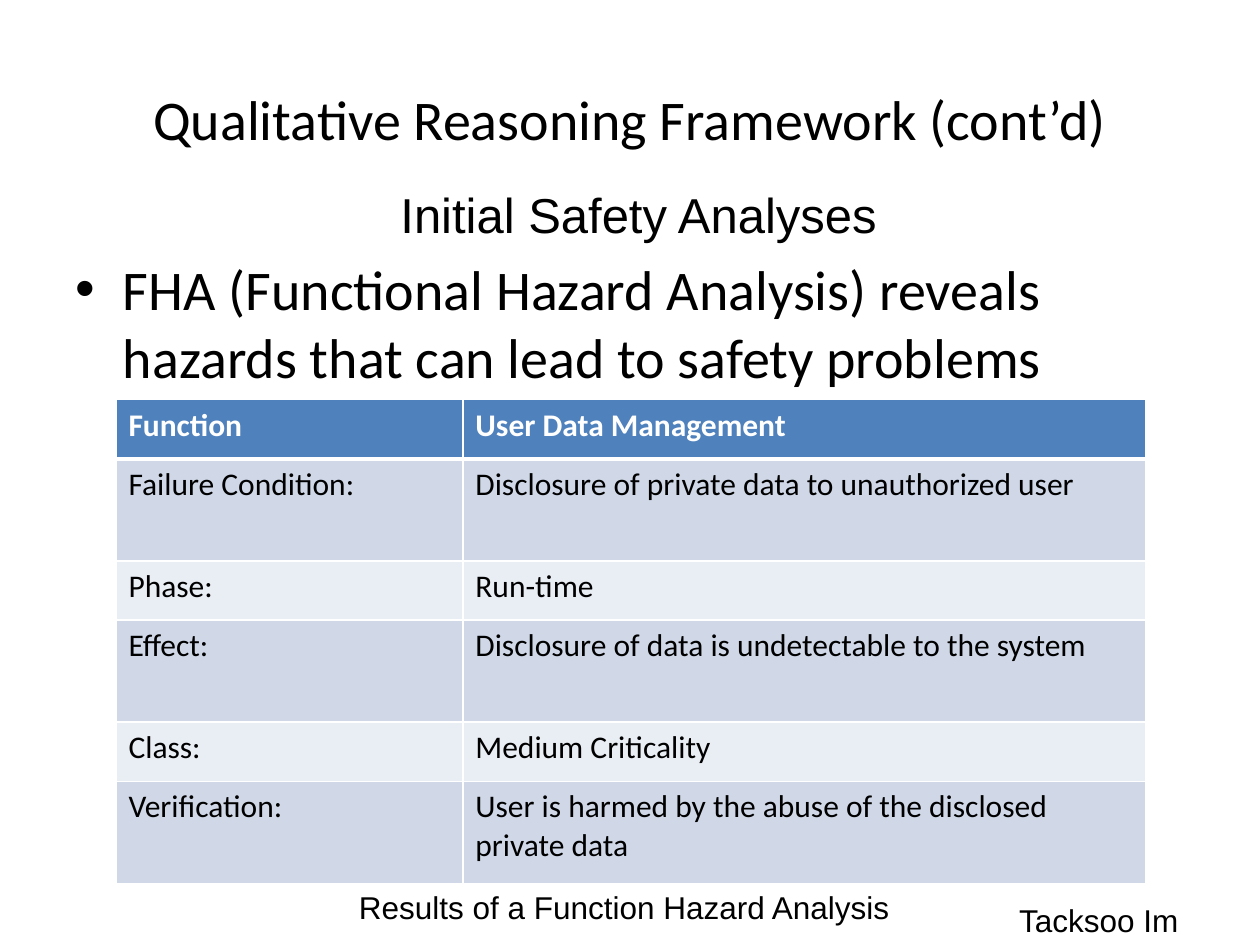
from lxml.etree import SubElement as Sub
from pptx import Presentation
from pptx.dml.color import RGBColor as RGB
from pptx.enum.text import MSO_ANCHOR as Anchor, MSO_AUTO_SIZE as Fit, PP_ALIGN as Align
from pptx.oxml.ns import qn
from pptx.util import Inches, Pt

WIDE, HIGH = Inches(10), Inches(7.5)
COLORS = {"ink": "000000", "white": "FFFFFF", "head": "4F81BD",
          "odd": "D0D8E8", "even": "E9EDF4"}
ROWS = [
    ("Function", "User Data Management"),
    ("Failure Condition:", "Disclosure of private data to unauthorized user"),
    ("Phase:", "Run-time"),
    ("Effect:", "Disclosure of data is undetectable to the system"),
    ("Class:", "Medium Criticality"),
    ("Verification:", "User is harmed by the abuse of the disclosed private data"),
]
SHORT, TALL = 0.47, 0.81  # row heights in inches
SPLIT = 0.337             # first column's share of the table


def area(left, top, width, height):
    """Turn shares of the slide into lengths."""
    return (int(left * WIDE), int(top * HIGH), int(width * WIDE), int(height * HIGH))


def place(shape, box):
    shape.left, shape.top, shape.width, shape.height = box


def write(frame, text, size, face="Calibri", color="ink", bold=False):
    frame.text = text
    para = frame.paragraphs[0]
    font = para.font
    font.name, font.size, font.bold = face, Pt(size), bold
    font.color.rgb = RGB.from_string(COLORS[color])
    return para


def add_title(slide, box, text):
    shape = slide.shapes.title
    place(shape, box)
    shape.text_frame.vertical_anchor = Anchor.MIDDLE
    write(shape.text_frame, text, 32).alignment = Align.CENTER


def add_body(slide, box, text):
    shape = slide.placeholders[1]
    place(shape, box)
    write(shape.text_frame, text, 32)


def add_label(slide, box, text, size, wrap=True):
    frame = slide.shapes.add_textbox(*box).text_frame
    frame.word_wrap = wrap
    frame.auto_size = Fit.SHAPE_TO_FIT_TEXT
    write(frame, text, size, "Arial")


def add_edges(cell, row):
    """White cell borders, thick between the header and the body."""
    props = cell._tc.get_or_add_tcPr()
    thick = {0: "lnB", 1: "lnT"}.get(row)
    for side in ("lnL", "lnR", "lnT", "lnB"):
        line = Sub(props, qn(f"a:{side}"), w=str(Pt(3 if side == thick else 1)))
        fill = Sub(line, qn("a:solidFill"))
        Sub(fill, qn("a:srgbClr"), val=COLORS["white"])


def add_grid(slide, box, rows):
    table = slide.shapes.add_table(len(rows), 2, *box).table
    for col, share in zip(table.columns, (SPLIT, 1 - SPLIT)):
        col.width = int(box[2] * share)
    for i, texts in enumerate(rows):
        table.rows[i].height = Inches(TALL if i % 2 else SHORT)
        shade = "head" if i == 0 else "odd" if i % 2 else "even"
        for j, text in enumerate(texts):
            cell = table.cell(i, j)
            write(cell.text_frame, text, 18,
                  color="ink" if i else "white", bold=i == 0)
            add_edges(cell, i)
            cell.fill.solid()
            cell.fill.fore_color.rgb = RGB.from_string(COLORS[shade])


def main():
    deck = Presentation()
    deck.slide_width, deck.slide_height = WIDE, HIGH
    slide = deck.slides.add_slide(deck.slide_layouts[1])

    # Heading and bullet
    add_title(slide, area(0.05, 0.04, 0.9, 0.17),
              "Qualitative Reasoning Framework (cont’d)")
    add_body(slide, area(0.05, 0.263, 0.917, 0.66),
             "FHA (Functional Hazard Analysis) reveals hazards "
             "that can lead to safety problems")

    # Hazard table
    add_grid(slide, area(0.092, 0.423, 0.817, 0.511), ROWS)

    # Caption, subtitle and author
    add_label(slide, area(0.275, 0.933, 0.458, 0.053),
              "Results of a Function Hazard Analysis", 18)
    add_label(slide, area(0.308, 0.189, 0.408, 0.076),
              "Initial Safety Analyses", 28)
    add_label(slide, area(0.799, 0.947, 0.148, 0.053), "Tacksoo Im", 18, False)

    deck.save("out.pptx")


if __name__ == "__main__":
    main()
